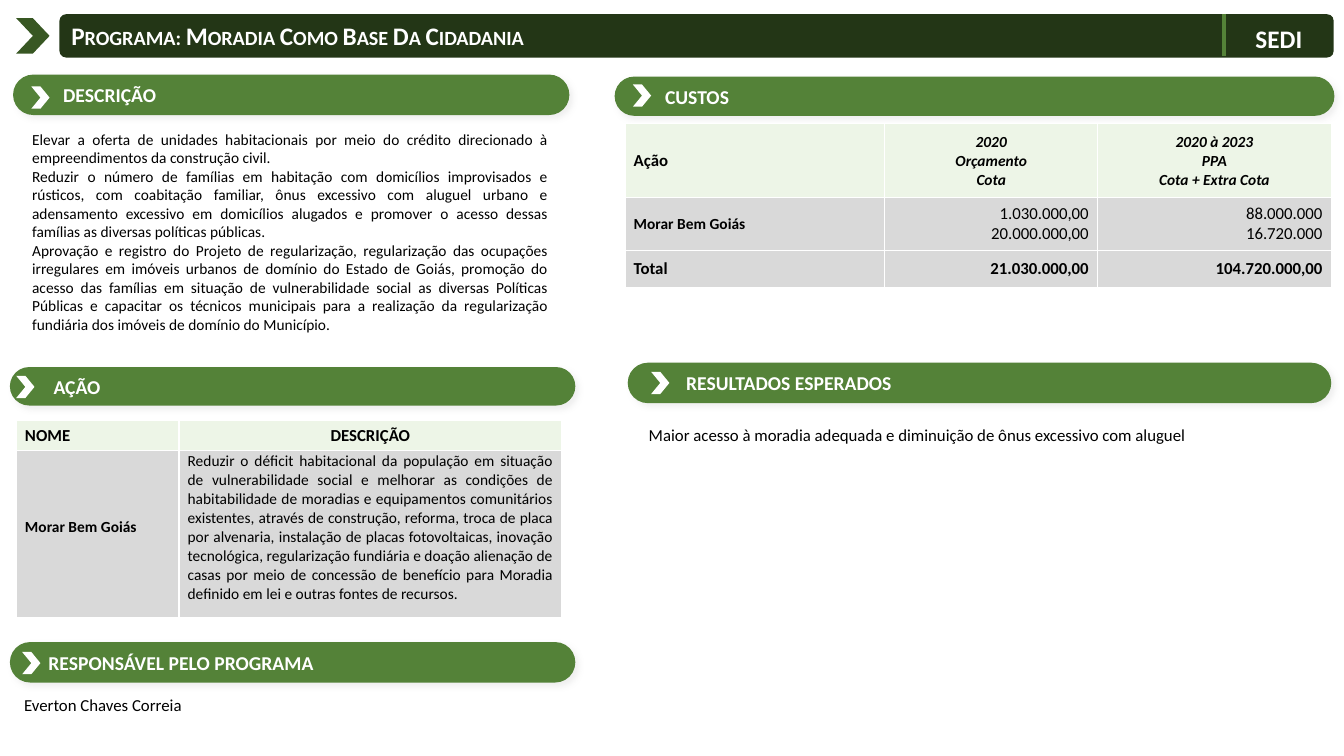
from lxml.etree import SubElement
from pptx import Presentation
from pptx.dml.color import RGBColor
from pptx.enum.shapes import MSO_CONNECTOR as Connector, MSO_SHAPE as Shape
from pptx.enum.text import MSO_ANCHOR as Anchor, PP_ALIGN as Align
from pptx.oxml.ns import qn
from pptx.util import Cm, Pt

COLORS = {
    "dark": "233616", "arrow": "385723", "green": "548238", "header": "EDF5E7",
    "body": "D9D9D9", "shadow": "D9D9D9", "white": "FFFFFF", "black": "000000",
}
FONT = "Calibri"
LEFT, CENTER, RIGHT, JUSTIFY = Align.LEFT, Align.CENTER, Align.RIGHT, Align.JUSTIFY

TITLE = "Programa: Moradia Como Base Da Cidadania"
AGENCY = "SEDI"

# Heading, banner box, left edge of the text, chevron position (cm)
BANNERS = [
    ("DESCRIÇÃO", (0.33, 1.88, 14.02, 1.02), 1.59, (0.79, 2.18)),
    ("AÇÃO", (0.25, 9.25, 14.25, 0.97), 1.35, (0.41, 9.47)),
    ("RESPONSÁVEL PELO PROGRAMA", (0.25, 16.18, 14.25, 1.02), 1.22, (0.56, 16.43)),
    ("CUSTOS", (15.49, 1.93, 18.14, 0.99), 16.76, (15.95, 2.13)),
    ("RESULTADOS ESPERADOS", (15.82, 9.14, 17.73, 1.02), 17.29, (16.41, 9.37)),
]

DESCRIPTION = [
    "Elevar a oferta de unidades habitacionais por meio do crédito direcionado à "
    "empreendimentos da construção civil.",
    "Reduzir o número de famílias em habitação com domicílios improvisados e rústicos, com "
    "coabitação familiar, ônus excessivo com aluguel urbano e adensamento excessivo em "
    "domicílios alugados e promover o acesso dessas famílias as diversas políticas públicas.",
    "Aprovação e registro do Projeto de regularização, regularização das ocupações irregulares "
    "em imóveis urbanos de domínio do Estado de Goiás, promoção do acesso das famílias em "
    "situação de vulnerabilidade social as diversas Políticas Públicas e capacitar os técnicos "
    "municipais para a realização da regularização fundiária dos imóveis de domínio do Município.",
]
ACTION_TEXT = (
    "Reduzir o déficit habitacional da população em situação de vulnerabilidade social e "
    "melhorar as condições de habitabilidade de moradias e equipamentos comunitários "
    "existentes, através de construção, reforma, troca de placa por alvenaria, instalação de "
    "placas fotovoltaicas, inovação tecnológica, regularização fundiária e doação alienação de "
    "casas por meio de concessão de benefício para Moradia definido em lei e outras fontes de "
    "recursos."
)
# Lines, box (cm), size, alignment, line spacing
TEXTS = [
    (DESCRIPTION, (0.56, 3.15, 13.51, 5.44), 11, JUSTIFY, 1.0),
    (["Maior acesso à moradia adequada e diminuição de ônus excessivo com aluguel"],
     (16.1, 10.57, 14.4, 0.76), 12, LEFT, 1.0),
    (["Everton Chaves Correia"], (0.36, 17.3, 14.43, 0.84), 12, LEFT, 1.14),
]

# Each cell: lines, alignment, size, bold, italic
ACTIONS = [
    [(["NOME"], LEFT, 12, True, False), (["DESCRIÇÃO"], CENTER, 12, True, False)],
    [(["Morar Bem Goiás"], JUSTIFY, 11, True, False), ([ACTION_TEXT], JUSTIFY, 11, False, False)],
]
COSTS = [
    [(["Ação"], LEFT, 12, True, False),
     (["2020", "Orçamento", "Cota"], CENTER, 11, True, True),
     (["2020 à 2023", "PPA", "Cota + Extra Cota"], CENTER, 11, True, True)],
    [(["Morar Bem Goiás"], LEFT, 11, True, False),
     (["1.030.000,00", "20.000.000,00"], RIGHT, 12, False, False),
     (["88.000.000", "16.720.000"], RIGHT, 12, False, False)],
    [(["Total"], LEFT, 12, True, False),
     (["21.030.000,00"], RIGHT, 12, True, False),
     (["104.720.000,00"], RIGHT, 12, True, False)],
]
# Rows, top left corner, column widths, row heights, bottom margin of body cells (cm)
TABLES = [
    (ACTIONS, (0.41, 10.6), (4.1, 9.65), (0.76, 4.19), 0.33),
    (COSTS, (15.75, 3.12), (6.55, 5.36, 5.89), (1.86, 1.33, 0.94), 0),
]


def rgb(name):
    return RGBColor.from_string(COLORS[name])


def write(frame, lines, size, color, bold=False, italic=False, align=LEFT, spacing=1.0):
    for number, line in enumerate(lines):
        para = frame.add_paragraph() if number else frame.paragraphs[0]
        para.add_run().text = line
        para.alignment, para.line_spacing = align, spacing
        font = para.font
        font.name, font.size, font.bold, font.italic = FONT, Pt(size), bold, italic
        font.color.rgb = rgb(color)


def add_shape(page, kind, box, color):
    shape = page.shapes.add_shape(kind, *map(Cm, box))
    shape.shadow.inherit = False
    shape.fill.solid()
    shape.fill.fore_color.rgb = rgb(color)
    shape.line.fill.background()
    shape.text_frame.vertical_anchor = Anchor.MIDDLE
    return shape


def add_text(page, box, lines, size, color, wrap=True, **style):
    frame = page.shapes.add_textbox(*map(Cm, box)).text_frame
    frame.word_wrap = wrap
    write(frame, lines, size, color, **style)


def add_shadow(shape):
    effects = shape._element.spPr.find(qn("a:effectLst"))
    outer = SubElement(effects, qn("a:outerShdw"), blurRad=str(Pt(4)), dist=str(Pt(3)),
                       dir="2700000", algn="tl", rotWithShape="0")
    tint = SubElement(outer, qn("a:srgbClr"), val=COLORS["shadow"])
    SubElement(tint, qn("a:alpha"), val="40000")


def add_borders(cell):
    properties = cell._tc.get_or_add_tcPr()
    for place, side in enumerate(("lnL", "lnR", "lnT", "lnB")):
        line = SubElement(properties, qn("a:" + side), w=str(Pt(1)))
        SubElement(SubElement(line, qn("a:solidFill")), qn("a:srgbClr"), val=COLORS["white"])
        properties.insert(place, line)


def add_table(page, rows, corner, widths, heights, bottom):
    box = (*corner, sum(widths), sum(heights))
    table = page.shapes.add_table(len(rows), len(widths), *map(Cm, box)).table
    table.first_row = table.horz_banding = False
    for column, width in zip(table.columns, widths):
        column.width = Cm(width)
    for r, (row, height) in enumerate(zip(rows, heights)):
        table.rows[r].height = Cm(height)
        for c, (lines, align, size, bold, italic) in enumerate(row):
            cell = table.cell(r, c)
            cell.fill.solid()
            cell.fill.fore_color.rgb = rgb("body" if r else "header")
            cell.vertical_anchor = Anchor.MIDDLE
            cell.margin_left = cell.margin_right = Cm(0.22)
            cell.margin_top = Cm(0 if r else 0.12)
            cell.margin_bottom = Cm(bottom if r else 0.12)
            write(cell.text_frame, lines, size, "black", bold, italic, align)
            add_borders(cell)


def main():
    deck = Presentation()
    deck.slide_width, deck.slide_height = Cm(33.87), Cm(19.05)
    page = deck.slides.add_slide(deck.slide_layouts[6])

    # Title bar
    add_shape(page, Shape.CHEVRON, (0.41, 0.46, 0.84, 0.89), "arrow")
    bar = add_shape(page, Shape.ROUNDED_RECTANGLE, (1.5, 0.36, 32.11, 1.09), "dark")
    bar.adjustments[0] = 0.15
    write(bar.text_frame, [TITLE], 18, "white", bold=True)
    span = bar.text_frame.paragraphs[0].runs[0]
    span._r.get_or_add_rPr().set("cap", "small")
    divider = page.shapes.add_connector(Connector.STRAIGHT, Cm(30.84), Cm(0.36), Cm(30.84), Cm(1.42))
    divider.line.color.rgb = rgb("green")
    divider.line.width = Pt(3)
    SubElement(divider._element.spPr, qn("a:effectLst"))
    add_text(page, (31.39, 0.46, 1.7, 1.02), [AGENCY], 18, "white", wrap=False, bold=True)

    # Section banners
    for heading, box, text_left, corner in BANNERS:
        banner = add_shape(page, Shape.ROUNDED_RECTANGLE, box, "green")
        banner.adjustments[0] = 0.5
        add_shadow(banner)
        frame = banner.text_frame
        # The rounded ends already indent the text by about 0.29 of the radius
        frame.margin_left = Cm(text_left - box[0] - 0.29 * box[3] / 2)
        frame.margin_top = frame.margin_bottom = Cm(0.1)
        write(frame, [heading], 14, "white", bold=True)
        add_shape(page, Shape.CHEVRON, (*corner, 0.46, 0.56), "white")

    # Tables and texts
    for table in TABLES:
        add_table(page, *table)
    for lines, box, size, align, spacing in TEXTS:
        add_text(page, box, lines, size, "black", align=align, spacing=spacing)

    deck.save("out.pptx")


if __name__ == "__main__":
    main()
